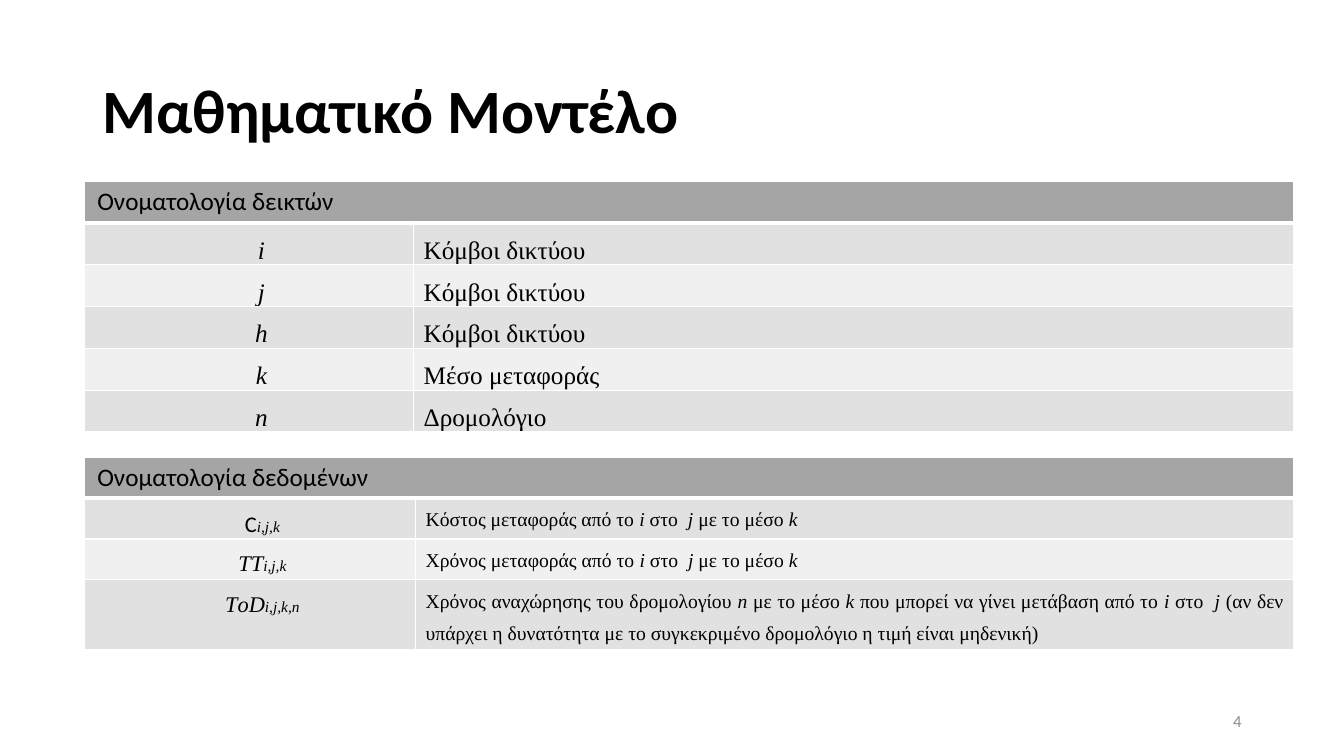
"""Build the slide that lists the indices and data of the mathematical model."""
from lxml import etree
from pptx import Presentation
from pptx.dml.color import RGBColor
from pptx.enum.text import MSO_ANCHOR, PP_ALIGN
from pptx.oxml.ns import qn
from pptx.util import Pt

LEFT, CENTER, RIGHT, JUSTIFY = PP_ALIGN.LEFT, PP_ALIGN.CENTER, PP_ALIGN.RIGHT, PP_ALIGN.JUSTIFY
TOP, MIDDLE = MSO_ANCHOR.TOP, MSO_ANCHOR.MIDDLE
SANS, SERIF = "Calibri", "Times New Roman"
COLORS = {"ink": "000000", "number": "8C8C8C", "header": "A5A5A5",
          "odd": "E1E1E1", "even": "F0F0F0", "border": "FFFFFF"}

TITLE = "Μαθηματικό Μοντέλο"
PAGE_NUMBER = "4"
INDICES = [
    ("i", "Κόμβοι δικτύου"),
    ("j", "Κόμβοι δικτύου"),
    ("h", "Κόμβοι δικτύου"),
    ("k", "Μέσο μεταφοράς"),
    ("n", "Δρομολόγιο"),
]
DATA = [
    ("C", "i,j,k", "Κόστος μεταφοράς από το *i* στο  *j* με το μέσο *k*"),
    ("ΤΤ", "i,j,k", "Χρόνος μεταφοράς από το *i* στο  *j* με το μέσο *k*"),
    ("ΤoD", "i,j,k,n",
     "Χρόνος αναχώρησης του δρομολογίου *n *με το μέσο *k* που μπορεί να γίνει "
     "μετάβαση από το *i* στο  *j* (αν δεν υπάρχει η δυνατότητα με το "
     "συγκεκριμένο δρομολόγιο η τιμή είναι μηδενική)"),
]
TABLE_LEFT, TABLE_WIDTH = 60, 864
ROW_HEIGHT, TALL_ROW = 29.2, 49.6
SYMBOL_INDENT = 18
HEADER_INSETS = (9.5, 3.6, 9.5, 3.6)
BODY_INSETS = (7.2, 0, 7.2, 0)


def color(name):
    return RGBColor.from_string(COLORS[name])


def add_span(para, text, size, name=SANS, italic=False, bold=False, ink="ink"):
    span = para.add_run()
    span.text = text
    formats = {"size": Pt(size), "name": name, "italic": italic, "bold": bold}
    for key, value in formats.items():
        setattr(span.font, key, value)
    span.font.color.rgb = color(ink)


def add_borders(cell, bottom_width):
    properties = cell._tc.get_or_add_tcPr()
    widths = {"lnL": 1, "lnR": 1, "lnT": 1, "lnB": bottom_width}
    for position, (tag, width) in enumerate(widths.items()):
        line = etree.Element(qn(f"a:{tag}"), w=str(Pt(width)))
        fill = etree.SubElement(line, qn("a:solidFill"))
        etree.SubElement(fill, qn("a:srgbClr"), val=COLORS["border"])
        properties.insert(position, line)


def format_cell(cell, fill, insets, anchor, align, spacing=1.0, bottom_width=1):
    cell.fill.solid()
    cell.fill.fore_color.rgb = color(fill)
    add_borders(cell, bottom_width)
    sides = ("margin_left", "margin_top", "margin_right", "margin_bottom")
    for side, inset in zip(sides, insets):
        setattr(cell, side, Pt(inset))
    cell.vertical_anchor = anchor
    para = cell.text_frame.paragraphs[0]
    para.alignment, para.line_spacing = align, spacing
    return para


def add_table(page, top, symbol_width, heading, heights, anchor):
    """Return the symbol and meaning paragraphs of each body row."""
    frame = page.shapes.add_table(len(heights) + 1, 2, Pt(TABLE_LEFT), Pt(top),
                                  Pt(TABLE_WIDTH), Pt(ROW_HEIGHT + sum(heights)))
    table = frame.table
    for column, width in zip(table.columns, (symbol_width, TABLE_WIDTH - symbol_width)):
        column.width = Pt(width)
    for row, height in zip(table.rows, [ROW_HEIGHT, *heights]):
        row.height = Pt(height)
    for column in range(2):
        para = format_cell(table.cell(0, column), "header", HEADER_INSETS, MIDDLE,
                           LEFT, bottom_width=3)
        if column == 0:
            add_span(para, heading, 18)
    table.cell(0, 0).merge(table.cell(0, 1))
    pairs = []
    for row in range(1, len(heights) + 1):
        fill = "odd" if row % 2 else "even"
        symbol, meaning = (
            format_cell(table.cell(row, column), fill, BODY_INSETS, anchor, align, 1.5)
            for column, align in enumerate((CENTER, JUSTIFY)))
        symbol._p.get_or_add_pPr().set("marL", str(Pt(SYMBOL_INDENT)))
        pairs.append((symbol, meaning))
    return pairs


def main():
    deck = Presentation()
    deck.slide_width, deck.slide_height = Pt(960), Pt(540)
    page = deck.slides.add_slide(deck.slide_layouts[5])

    title = page.shapes.title
    title.left, title.top, title.width, title.height = Pt(66), Pt(28.8), Pt(828), Pt(104.4)
    title.text_frame.vertical_anchor = MIDDLE
    para = title.text_frame.paragraphs[0]
    para.alignment, para.line_spacing = LEFT, 0.9
    add_span(para, TITLE, 44, bold=True)

    pairs = add_table(page, 129.9, 235.4, "Ονοματολογία δεικτών",
                      [ROW_HEIGHT] * len(INDICES), MIDDLE)
    for (symbol, meaning), (index, text) in zip(pairs, INDICES):
        add_span(symbol, index, 18, SERIF, italic=True)
        add_span(meaning, text, 18, SERIF)

    heights = [ROW_HEIGHT] * (len(DATA) - 1) + [TALL_ROW]
    pairs = add_table(page, 326.4, 236.9, "Ονοματολογία δεδομένων", heights, TOP)
    for (symbol, meaning), (name, subscript, text) in zip(pairs, DATA):
        plain = name == "C"
        add_span(symbol, name, 16, SANS if plain else SERIF, italic=not plain)
        add_span(symbol, subscript, 11, SERIF, italic=True)
        for position, part in enumerate(text.split("*")):
            if part:
                add_span(meaning, part, 14, SERIF, italic=position % 2 == 1)

    box = page.shapes.add_textbox(Pt(678), Pt(500.5), Pt(216), Pt(28.8))
    box.text_frame.word_wrap = True
    box.text_frame.vertical_anchor = MIDDLE
    para = box.text_frame.paragraphs[0]
    para.alignment = RIGHT
    add_span(para, PAGE_NUMBER, 12, ink="number")

    deck.save("out.pptx")


if __name__ == "__main__":
    main()
